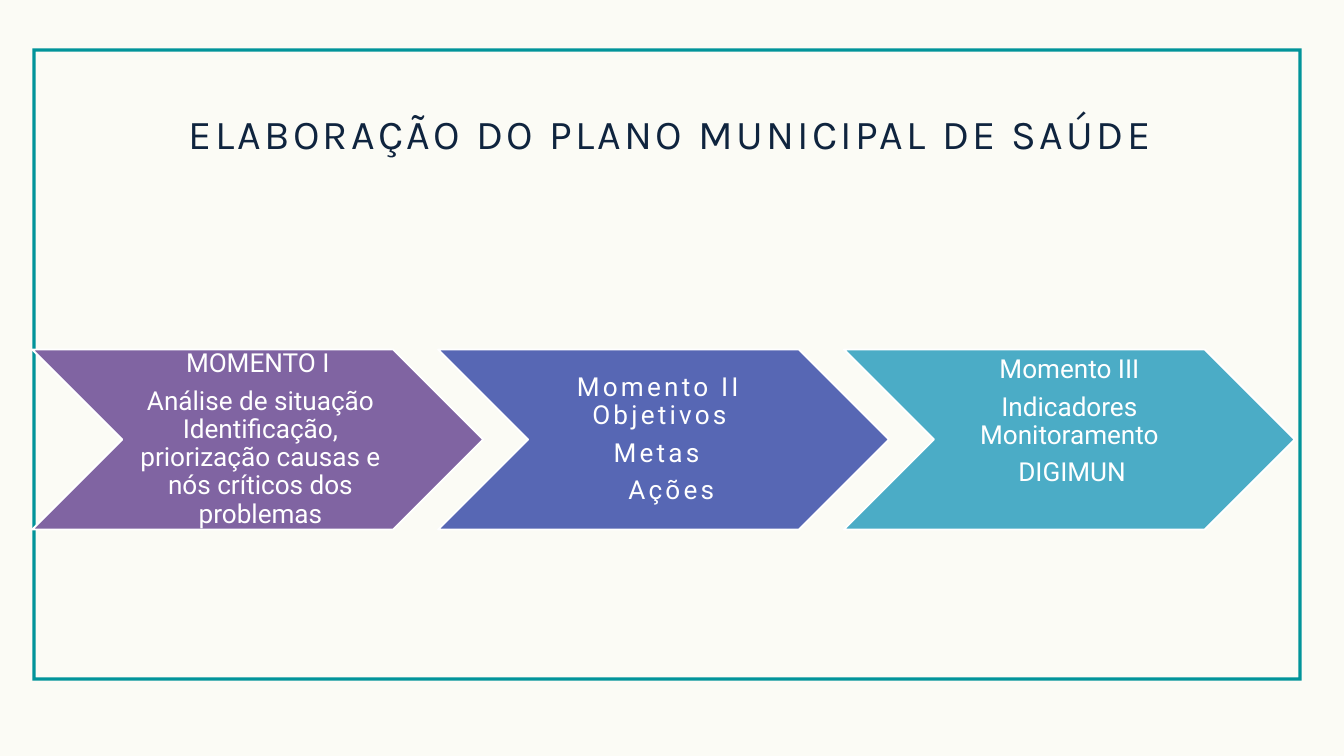
import pptx
import pptx.dml.color
import pptx.enum.shapes
import pptx.enum.text
import pptx.util

Inches, Pt = pptx.util.Inches, pptx.util.Pt
CENTER = pptx.enum.text.PP_ALIGN.CENTER

# Content
TITLE = "ELABORAÇÃO DO PLANO MUNICIPAL DE SAÚDE"
# Each paragraph: text, left indent, right indent (inches)
STAGES = [
    {"fill": "8064A2", "tracking": 0, "bottom": 0.04, "paras": [
        ("MOMENTO I", 0, 0.08),
        ("Análise de situação Identificação, priorização causas e "
         "nós críticos dos problemas", 0, 0)]},
    {"fill": "5767B4", "tracking": 3.5, "bottom": 0.04, "paras": [
        ("Momento II Objetivos", 0, 0.2), ("Metas", 0, 0.29), ("Ações", 0.15, 0)]},
    {"fill": "4BACC6", "tracking": 0, "bottom": 0.57, "paras": [
        ("Momento III", 0, 0.08), ("Indicadores Monitoramento", 0, 0.08),
        ("DIGIMUN", 0, 0)]},
]

# Layout in inches
WIDTH, HEIGHT = 20, 11.25
BORDER = (0.48, 0.72, 19.37, 10.13)  # left, top, right, bottom
BORDER_THICKNESS = 0.05
STAGE_LEFT, STAGE_TOP, STAGE_WIDTH, STAGE_HEIGHT = 0.48, 5.2, 6.71, 2.68
STAGE_PITCH = 0.9 * STAGE_WIDTH


def color(hex_string):
    return pptx.dml.color.RGBColor.from_string(hex_string)


def paint(fill, hex_string):
    fill.solid()
    fill.fore_color.rgb = color(hex_string)


def style_para(para, font, size, hex_string, tracking):
    para.alignment = CENTER
    for span in para.runs:
        span.font.name = font
        span.font.size = Pt(size)
        span.font.color.rgb = color(hex_string)
        if tracking:
            span.font._element.set("spc", str(int(tracking * 100)))


def add_border(slide):
    left, top, right, bottom = (Inches(edge) for edge in BORDER)
    inset = Inches(BORDER_THICKNESS)
    builder = slide.shapes.build_freeform(left, top)
    builder.add_line_segments([(left, bottom), (right, bottom), (right, top)])
    # The inner outline runs the other way round to cut the hole
    left, top, right, bottom = left + inset, top + inset, right - inset, bottom - inset
    builder.move_to(left, top)
    builder.add_line_segments([(right, top), (right, bottom), (left, bottom)])
    border = builder.convert_to_shape()
    border.shadow.inherit = False
    paint(border.fill, "01949A")
    border.line.fill.background()


def add_title(slide):
    title = slide.shapes.title
    title.left, title.top = Inches(0.59), Inches(1.36)
    title.width, title.height = Inches(18.77), Inches(1)
    frame = title.text_frame
    frame.text = TITLE
    frame.word_wrap = True
    frame.auto_size = pptx.enum.text.MSO_AUTO_SIZE.NONE
    frame.vertical_anchor = pptx.enum.text.MSO_ANCHOR.TOP
    frame.margin_left = frame.margin_right = frame.margin_top = frame.margin_bottom = 0
    para = frame.paragraphs[0]
    para.line_spacing = Pt(70.8)
    style_para(para, "Karla", 44, "0F243E", 3.5)


def add_stage(slide, index, stage):
    chevron = slide.shapes.add_shape(
        pptx.enum.shapes.MSO_SHAPE.CHEVRON,
        Inches(STAGE_LEFT + index * STAGE_PITCH), Inches(STAGE_TOP),
        Inches(STAGE_WIDTH), Inches(STAGE_HEIGHT))
    chevron.shadow.inherit = False
    paint(chevron.fill, stage["fill"])
    chevron.line.color.rgb = color("FFFFFF")
    chevron.line.width = Pt(2)

    frame = chevron.text_frame
    frame.word_wrap = True
    frame.vertical_anchor = pptx.enum.text.MSO_ANCHOR.MIDDLE
    frame.margin_left = Inches(0.12)
    frame.margin_top = frame.margin_right = Inches(0.04)
    frame.margin_bottom = Inches(stage["bottom"])
    frame.text = "\n".join(text for text, _, _ in stage["paras"])
    for para, (_, indent_left, indent_right) in zip(frame.paragraphs, stage["paras"]):
        para.line_spacing = 0.9
        para.space_after = Pt(9.8)
        style_para(para, "Roboto", 28, "FFFFFF", stage["tracking"])
        properties = para._p.get_or_add_pPr()
        properties.set("marL", str(Inches(indent_left)))
        properties.set("marR", str(Inches(indent_right)))


def main():
    deck = pptx.Presentation()
    deck.slide_width, deck.slide_height = Inches(WIDTH), Inches(HEIGHT)
    page = deck.slides.add_slide(deck.slide_layouts.get_by_name("Title Only"))
    paint(page.background.fill, "FBFBF5")
    add_border(page)
    add_title(page)
    for index, stage in enumerate(STAGES):
        add_stage(page, index, stage)
    deck.save("out.pptx")


if __name__ == "__main__":
    main()
